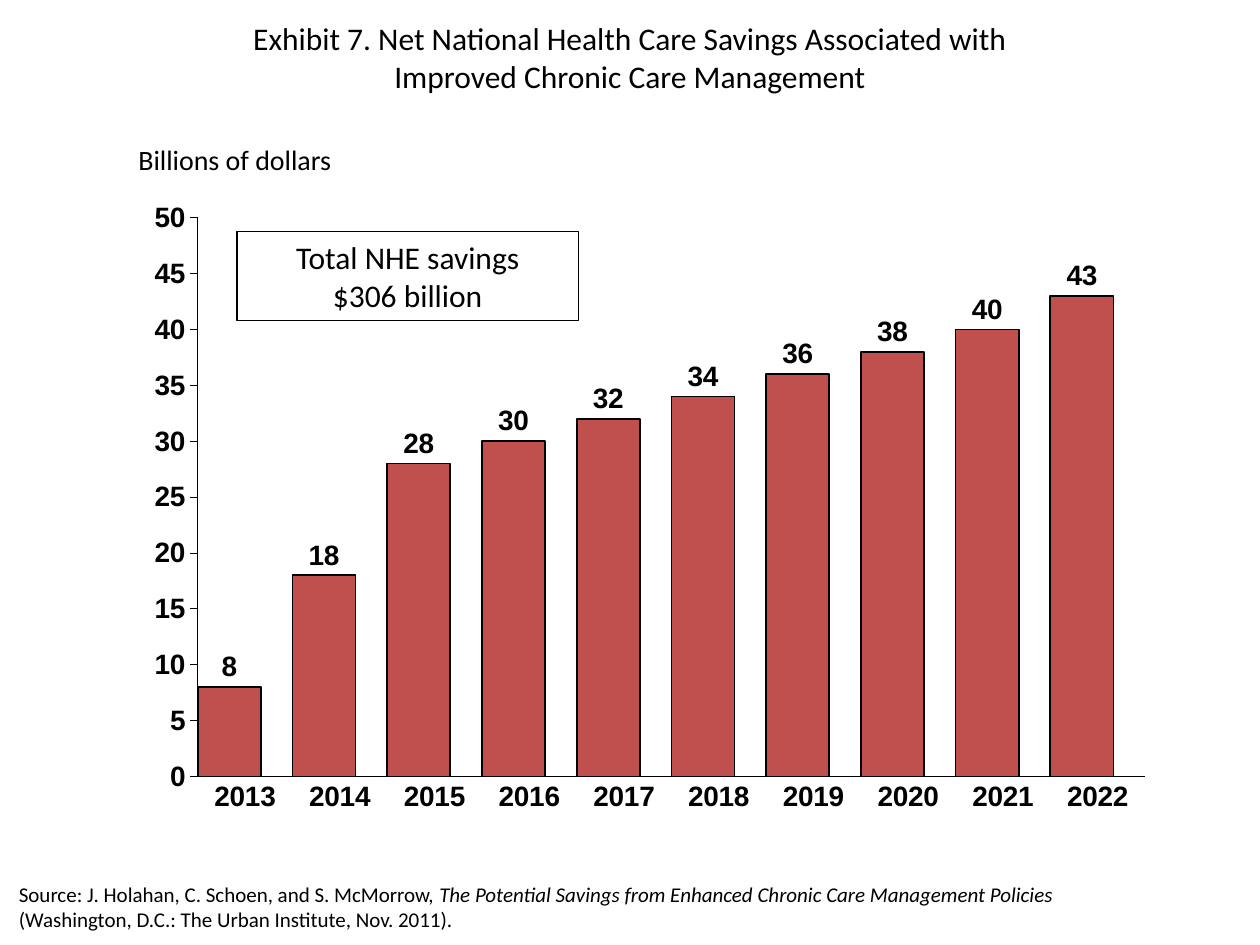
from lxml import etree
from pptx import Presentation
from pptx.chart.data import CategoryChartData
from pptx.dml.color import RGBColor
from pptx.enum.chart import XL_CHART_TYPE, XL_LABEL_POSITION, XL_TICK_MARK
from pptx.enum.shapes import MSO_SHAPE
from pptx.enum.text import MSO_ANCHOR, PP_ALIGN
from pptx.oxml.ns import qn
from pptx.util import Cm, Pt


def rgb(value):
    return RGBColor.from_string(value)


def style(sp, size, align):
    tf = sp.text_frame
    tf.word_wrap = True
    tf.vertical_anchor = MSO_ANCHOR.TOP
    for p in tf.paragraphs:
        p.alignment = align
        for r in p.runs:
            r.font.name = "Calibri"
            r.font.size = Pt(size)
            r.font.color.rgb = rgb("000000")


prs = Presentation()
prs.slide_width, prs.slide_height = Cm(25.4), Cm(19.05)
s = prs.slides.add_slide(prs.slide_layouts[5])

data = CategoryChartData()
data.categories = [str(year) for year in range(2013, 2023)]
data.add_series("Series 1", [8, 18, 28, 30, 32, 34, 36, 38, 40, 43])
data.add_series("Series 2", [None] * 10)
chart = s.shapes.add_chart(XL_CHART_TYPE.COLUMN_CLUSTERED, Cm(1.17), Cm(2.16),
                           Cm(22.71), Cm(15.06), data).chart
chart.has_legend = False
chart.has_title = False

plot = chart.plots[0]
plot.gap_width = 0
plot.overlap = 50
plot.vary_by_categories = False
for series in plot.series:
    series.format.fill.solid()
    series.format.fill.fore_color.rgb = rgb("C0504D")
    series.format.line.color.rgb = rgb("000000")
    series.format.line.width = Pt(1)

labels = plot.series[0].data_labels
labels.show_value = True
labels.number_format = "#,##0"
labels.number_format_is_linked = False
labels.position = XL_LABEL_POSITION.OUTSIDE_END

cat, val = chart.category_axis, chart.value_axis
for axis in (cat, val):
    axis.has_major_gridlines = False
    axis.minor_tick_mark = XL_TICK_MARK.NONE
    axis.format.line.color.rgb = rgb("000000")
    axis.format.line.width = Pt(0.34)
cat.major_tick_mark = XL_TICK_MARK.NONE
val.major_tick_mark = XL_TICK_MARK.OUTSIDE
val.minimum_scale, val.maximum_scale, val.major_unit = 0, 50, 5
val.tick_labels.number_format = "#,##0"
val.tick_labels.number_format_is_linked = False

for font in (chart.font, cat.tick_labels.font, val.tick_labels.font, labels.font):
    font.name = "Arial"
    font.size = Pt(16)
    font.bold = True
    font.color.rgb = rgb("000000")

area = chart.plots[0]._element.getparent()
for old in area.findall(qn("c:layout")):
    area.remove(old)
layout = etree.Element(qn("c:layout"))
area.insert(0, layout)
manual = etree.SubElement(layout, qn("c:manualLayout"))
for tag, value in (("layoutTarget", "inner"), ("xMode", "edge"), ("yMode", "edge"),
                   ("x", "0.124"), ("y", "0.148"), ("w", "0.841"), ("h", "0.748")):
    etree.SubElement(manual, qn("c:" + tag)).set("val", value)

title = s.shapes.title
title.left, title.top, title.width, title.height = Cm(0), Cm(0.25), Cm(25.4), Cm(2.03)
title.text_frame.text = ("Exhibit 7. Net National Health Care Savings Associated with\v"
                         "Improved Chronic Care Management")
style(title, 18, PP_ALIGN.CENTER)

source = s.shapes.add_textbox(Cm(0.13), Cm(17.65), Cm(22.28), Cm(1.28))
p = source.text_frame.paragraphs[0]
for text, italic in (
        ("Source: J. Holahan, C. Schoen, and S. McMorrow, ", False),
        ("The Potential Savings from Enhanced Chronic Care Management Policies", True),
        (" (Washington, D.C.: The Urban Institute, Nov. 2011).", False)):
    r = p.add_run()
    r.text = text
    r.font.italic = italic
style(source, 12, PP_ALIGN.LEFT)

unit = s.shapes.add_textbox(Cm(2.54), Cm(2.74), Cm(5.49), Cm(0.94))
unit.text_frame.text = "Billions of dollars"
style(unit, 16, PP_ALIGN.LEFT)

total = s.shapes.add_shape(MSO_SHAPE.RECTANGLE, Cm(4.78), Cm(4.67), Cm(6.88), Cm(1.8))
total.shadow.inherit = False
total.fill.background()
total.line.color.rgb = rgb("000000")
total.line.width = Pt(0.75)
total.text_frame.text = "Total NHE savings\n$306 billion"
style(total, 18, PP_ALIGN.CENTER)

prs.save("out.pptx")
